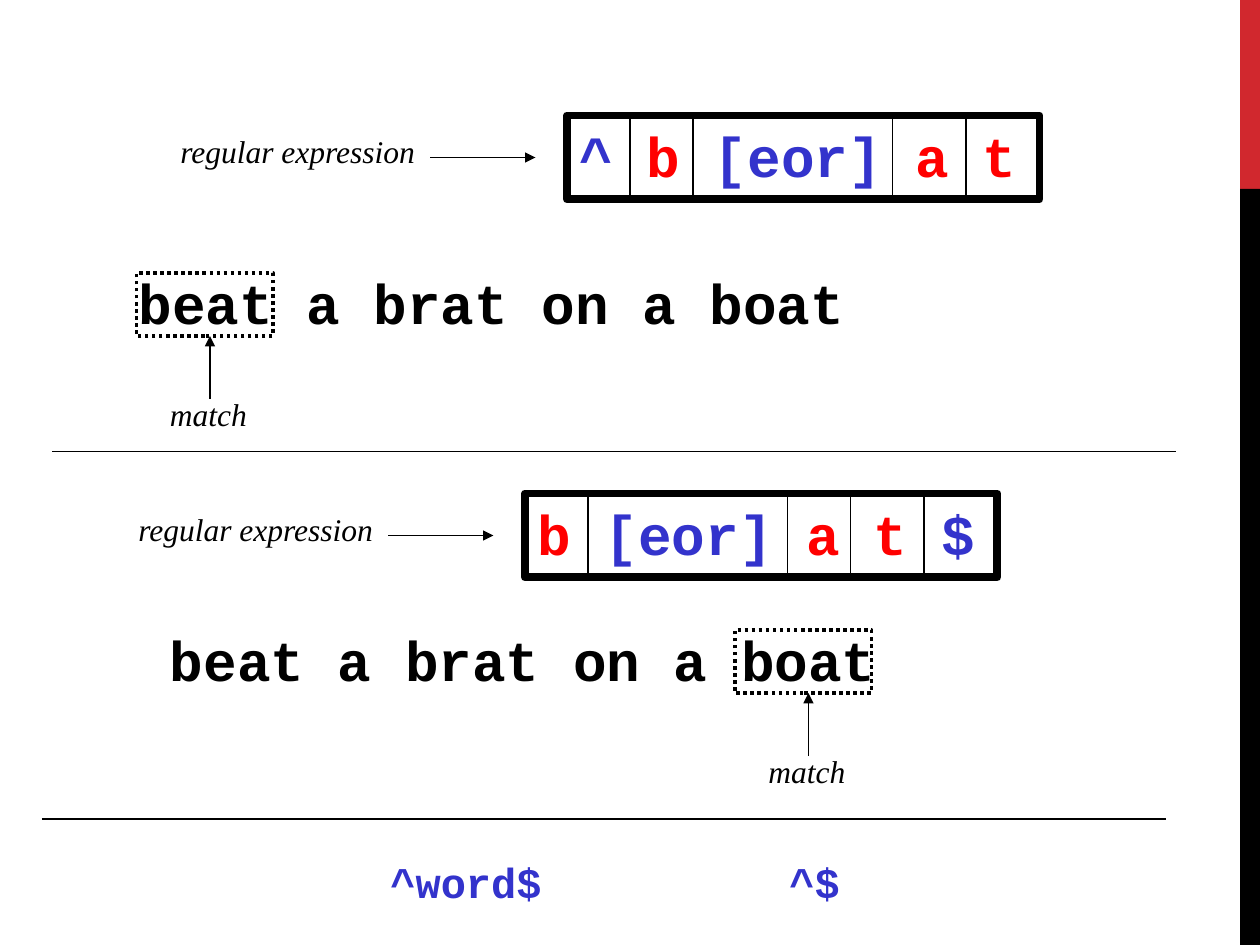
from pptx import Presentation
from pptx.dml.color import RGBColor
from pptx.enum.dml import MSO_LINE
from pptx.enum.shapes import MSO_CONNECTOR, MSO_SHAPE
from pptx.enum.text import MSO_AUTO_SIZE
from pptx.oxml.ns import qn
from pptx.util import Pt
from lxml.etree import SubElement

PX = 7620  # EMU per px, 120 px to the inch
COLORS = {"black": "000000", "accent": "D1282E", "literal": "FF0000", "meta": "3333CC"}
MONO, SERIF = "Courier New", "Times New Roman"


def color(name):
    return RGBColor.from_string(COLORS[name])


def box(s, x, y, w, h, fill=None, line=None, dash=None):
    sp = s.shapes.add_shape(MSO_SHAPE.RECTANGLE, x * PX, y * PX, w * PX, h * PX)
    sp.shadow.inherit = False
    if fill:
        sp.fill.solid()
        sp.fill.fore_color.rgb = color(fill)
    else:
        sp.fill.background()
    if line:
        sp.line.color.rgb = color("black")
        sp.line.width = Pt(line)
        if dash:
            sp.line.dash_style = dash
    else:
        sp.line.fill.background()


def line(s, x1, y1, x2, y2, arrow=False):
    c = s.shapes.add_connector(MSO_CONNECTOR.STRAIGHT, x1 * PX, y1 * PX, x2 * PX, y2 * PX)
    c.line.color.rgb = color("black")
    c.line.width = Pt(0.75)
    if arrow:
        SubElement(c.line._get_or_add_ln(), qn("a:tailEnd"), type="triangle")
    SubElement(c._element.spPr, qn("a:effectLst"))


def text(s, x, y, w, h, runs, size, font=MONO, wrap=True):
    """Add one line of text; runs is a list of (text, colour name)."""
    tf = s.shapes.add_textbox(x * PX, y * PX, w * PX, h * PX).text_frame
    tf.word_wrap = wrap
    tf.auto_size = MSO_AUTO_SIZE.SHAPE_TO_FIT_TEXT
    p = tf.paragraphs[0]
    p.font.name, p.font.size = font, Pt(size)
    p.font.bold, p.font.italic = font == MONO, font == SERIF
    for content, name in runs:
        r = p.add_run()
        r.text = content
        r.font.color.rgb = color(name)
    # Space before is half a line, which needs a percentage
    before = SubElement(p._p.get_or_add_pPr(), qn("a:spcBef"))
    SubElement(before, qn("a:spcPct"), val="50000")
    p._p.pPr.insert(0, before)


def label(s, x, y, w, content):
    text(s, x, y, w, 48, [(content, "black")], 18, SERIF, wrap=False)


def sidebar(s, x, w):
    box(s, x, 0, w, 180, fill="accent")
    box(s, x, 180, w, 720, fill="black")


def regex(s, x, y, runs, dividers):
    """Framed expression split into cells, with its label and arrow on the left."""
    label(s, x - 380, y + 10, 250, "regular expression")
    line(s, x - 130, y + 40, x - 30, y + 40, arrow=True)
    box(s, x, y, 450, 80, line=4.5)
    text(s, x, y, 480, 75, runs, 32)
    for dx in dividers:
        line(s, x + dx, y, x + dx, y + 80)


def sentence(s, x, y, match_dx):
    """Sample sentence with a dotted frame and arrow on the matching word."""
    text(s, x, y, 810, 75, [("beat a brat on a boat", "black")], 32)
    mx, my = x + match_dx, y + 10
    box(s, mx, my, 130, 60, line=2, dash=MSO_LINE.ROUND_DOT)
    label(s, mx + 20, my + 110, 97, "match")
    line(s, mx + 70, my + 120, mx + 70, my + 60, arrow=True)


def examples(s, y):
    for x, w, content in [(360, 180, "^word$"), (740, 80, "^$")]:
        text(s, x, y, w, 60, [(content, "meta")], 24)


def main():
    prs = Presentation()
    prs.slide_width, prs.slide_height = 1200 * PX, 900 * PX
    s = prs.slides.add_slide(prs.slide_layouts[6])

    sidebar(s, 1181, 19)

    # Anchor at the start of the line
    regex(s, 540, 110,
          [("^", "meta"), (" b ", "literal"), ("[eor]", "meta"), (" a t", "literal")],
          [60, 120, 310, 380])
    sentence(s, 120, 250, 10)
    line(s, 50, 430, 1120, 430)

    # Anchor at the end of the line
    regex(s, 500, 470,
          [("b ", "literal"), ("[eor]", "meta"), (" a t ", "literal"), ("$", "meta")],
          [60, 250, 310, 380])
    sentence(s, 150, 590, 550)
    line(s, 40, 780, 1110, 780)

    # Both anchors
    examples(s, 810)

    prs.save("out.pptx")


if __name__ == "__main__":
    main()
